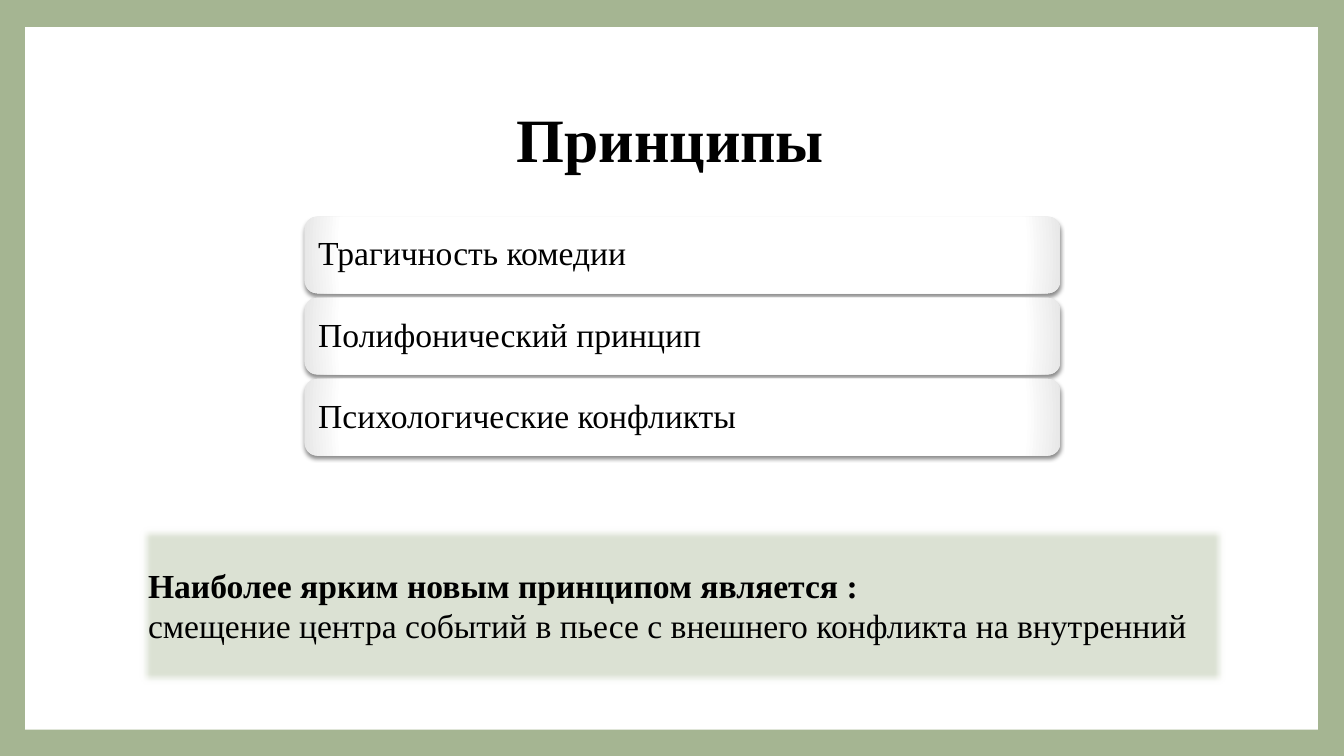
from pptx import Presentation
from pptx.dml.color import RGBColor
from pptx.enum.shapes import MSO_SHAPE as Form
from pptx.enum.text import MSO_ANCHOR as Anchor, PP_ALIGN as Align
from pptx.oxml import parse_xml
from pptx.util import Inches, Pt

NS = 'xmlns:a="http://schemas.openxmlformats.org/drawingml/2006/main"'
GLOW = f'''<a:gradFill {NS} rotWithShape="1"><a:gsLst>
<a:gs pos="0"><a:srgbClr val="FFFFFF"/></a:gs>
<a:gs pos="90000"><a:srgbClr val="FFFFFF"/></a:gs>
<a:gs pos="100000"><a:srgbClr val="E7E7E7"/></a:gs></a:gsLst>
<a:path path="circle"><a:fillToRect l="100000" t="100000" r="100000" b="100000"/></a:path>
</a:gradFill>'''
SHADE = f'''<a:effectLst {NS}><a:outerShdw blurRad="38100" dist="25400" dir="5400000" rotWithShape="0">
<a:srgbClr val="000000"><a:alpha val="45000"/></a:srgbClr></a:outerShdw></a:effectLst>'''
SOFT = f'<a:effectLst {NS}><a:softEdge rad="63500"/></a:effectLst>'


def paint(fill, color):
    fill.solid()
    fill.fore_color.rgb = RGBColor.from_string(color)


def write(shape, *lines, size=24, bold=(False,), align=Align.LEFT, lead=1.0):
    frame = shape.text_frame
    frame.word_wrap = True
    frame.vertical_anchor = Anchor.MIDDLE
    for i, line in enumerate(lines):
        para = frame.add_paragraph() if i else frame.paragraphs[0]
        para.alignment, para.line_spacing = align, lead
        run = para.add_run()
        run.text = line
        font = run.font
        font.name, font.size, font.bold = "Times New Roman", Pt(size), bold[i]
        paint(font.fill, "000000")


deck = Presentation()
deck.slide_width, deck.slide_height = Inches(13.33), Inches(7.5)
slide = deck.slides.add_slide(deck.slide_layouts[6])
shapes = slide.shapes
paint(slide.background.fill, "A5B592")

page = shapes.add_shape(Form.RECTANGLE, Inches(0.25), Inches(0.27), Inches(12.82), Inches(6.97))
paint(page.fill, "FFFFFF")
page.line.fill.background()
page.shadow.inherit = False

title = shapes.add_textbox(Inches(1.25), Inches(0.67), Inches(10.8), Inches(1.48))
write(title, "Принципы", size=44, bold=(True,), align=Align.CENTER, lead=0.9)

rules = ["Трагичность комедии", "Полифонический принцип", "Психологические конфликты"]
top, step = 2.15, 0.805
for row, rule in enumerate(rules):
    bar = shapes.add_shape(Form.ROUNDED_RECTANGLE, Inches(3.02), Inches(top + row * step),
                           Inches(7.5), Inches(0.76))
    bar.line.fill.background()
    props = bar.element.spPr
    props.insert(2, parse_xml(GLOW))
    props.append(parse_xml(SHADE))
    write(bar, rule, lead=0.9)

note = shapes.add_shape(Form.RECTANGLE, Inches(1.37), Inches(5.21), Inches(10.8), Inches(1.59))
paint(note.fill, "DBE1D3")
note.line.fill.background()
note.element.spPr.append(parse_xml(SOFT))
write(note, "Наиболее ярким новым принципом является :",
      "смещение центра событий в пьесе с внешнего конфликта на внутренний", bold=(True, False))

deck.save("out.pptx")
